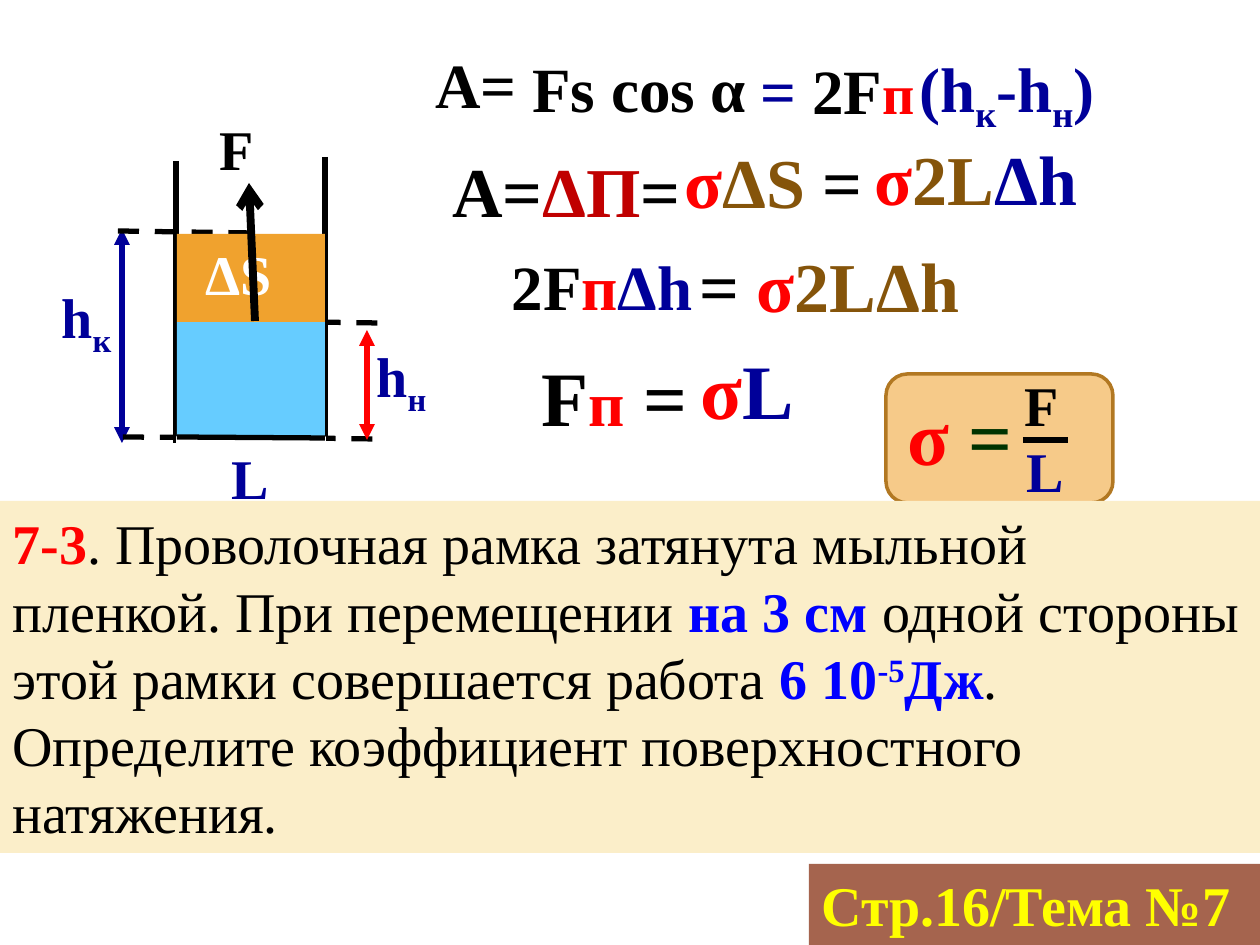
from lxml.etree import SubElement
from pptx import Presentation
from pptx.dml.color import RGBColor
from pptx.enum.dml import MSO_LINE_DASH_STYLE as Dash
from pptx.enum.shapes import MSO_CONNECTOR_TYPE as Connector, MSO_SHAPE as Shape
from pptx.enum.text import MSO_ANCHOR as Anchor, MSO_AUTO_SIZE as AutoSize, PP_ALIGN as Align
from pptx.oxml.ns import qn
from pptx.util import Emu, Pt

FONT = "Times New Roman"
BLACK = RGBColor(0, 0, 0)
WHITE = RGBColor(255, 255, 255)
RED = RGBColor(255, 0, 0)
CRIMSON = RGBColor(0xC0, 0, 0)
NAVY = RGBColor(0, 0, 0x99)
BLUE = RGBColor(0, 0, 255)
BROWN = RGBColor(0x85, 0x54, 0x0A)
GREEN = RGBColor(0, 0x33, 0)
YELLOW = RGBColor(255, 255, 0)
ORANGE = RGBColor(0xF0, 0xA2, 0x2E)
OCHRE = RGBColor(0xB2, 0x78, 0x22)
WATER = RGBColor(0x66, 0xCC, 0xFF)
CREAM = RGBColor(0xFB, 0xEE, 0xC9)
RUST = RGBColor(0xA5, 0x64, 0x4E)


def px(count):
    return Emu(round(count * 914400 / 126))


def write(box, runs, size, indent=0, wrap=False, anchor=Anchor.TOP):
    """Fill a box with one paragraph of (text, colour, font settings) runs."""
    frame = box.text_frame
    frame.word_wrap = wrap
    frame.auto_size = AutoSize.NONE if wrap else AutoSize.SHAPE_TO_FIT_TEXT
    frame.vertical_anchor = anchor
    frame.margin_left = px(12.6 + indent)
    para = frame.paragraphs[0]
    para.alignment = Align.LEFT
    para.font.name, para.font.size, para.font.bold = FONT, Pt(size), True
    for text, colour, *settings in runs:
        span = para.add_run()
        span.text = text
        span.font.color.rgb = colour
        for name, value in (settings[0] if settings else {}).items():
            if name == "baseline":
                span.font._element.set("baseline", str(value * 1000))
            else:
                setattr(span.font, name, value)


def add_label(page, at, runs, size, **layout):
    write(page.shapes.add_textbox(*map(px, at)), runs, size, **layout)


def add_block(page, at, fill, kind=Shape.RECTANGLE, line=None, width=0.75):
    block = page.shapes.add_shape(kind, *map(px, at))
    block.shadow.inherit = False
    block.fill.solid()
    block.fill.fore_color.rgb = fill
    if line is None:
        block.line.fill.background()
    else:
        block.line.color.rgb, block.line.width = line, Pt(width)
    return block


def add_line(page, ends, colour=BLACK, width=3, dashed=False, head=None, tail=None):
    line = page.shapes.add_connector(Connector.STRAIGHT, *map(px, ends))
    line.line.color.rgb, line.line.width = colour, Pt(width)
    if dashed:
        line.line.dash_style = Dash.DASH
    outline = line.line._get_or_add_ln()
    for tag, arrow in (("a:headEnd", head), ("a:tailEnd", tail)):
        if arrow:
            SubElement(outline, qn(tag), type=arrow)
    SubElement(line._element.spPr, qn("a:effectLst"))


def draw_vessel(page):
    both = {"head": "triangle", "tail": "triangle"}
    add_line(page, (122, 229, 122, 443), NAVY, **both)
    add_line(page, (176, 161, 176, 443))
    add_line(page, (325, 157, 325, 440))
    for ends in ((123, 437, 257, 438), (246, 321, 379, 323),
                 (118, 231, 251, 233), (241, 437, 374, 439)):
        add_line(page, ends, dashed=True)
    add_line(page, (367, 440, 367, 330), RED, **both)
    add_line(page, (184, 321, 316, 324), width=4.5)
    add_block(page, (177, 322, 148, 207), WATER)
    sub = {"baseline": -25}
    add_label(page, (364, 335, 78, 81), [("h", NAVY), ("н", NAVY, sub)], 32)
    add_label(page, (49, 276, 78, 81), [("h", NAVY), ("к", NAVY, sub)], 32)
    add_block(page, (177, 234, 148, 88), ORANGE)
    add_label(page, (179, 233, 147, 82), [("ΔS", WHITE)], 32, indent=14, wrap=True)
    base = add_block(page, (177, 437, 148, 105), WHITE, line=WHITE)
    write(base, [("L", NAVY)], 32, indent=42, wrap=True)
    add_line(page, (177, 437, 325, 438))
    add_line(page, (255, 321, 249, 183), width=4.5, tail="arrow")
    add_label(page, (207, 108, 60, 81), [("F", BLACK)], 32)


def write_formulas(page):
    sub = {"baseline": -25}
    add_label(page, (423, 39, 107, 89), [("A=", BLACK)], 36)
    add_label(page, (520, 43, 246, 89), [("Fs cos α", BLACK)], 36)
    add_label(page, (748, 45, 185, 89),
              [("= ", NAVY), ("2F", BLACK), ("п", RED, {"size": Pt(32)})], 36)
    add_label(page, (907, 43, 224, 89),
              [("(h", NAVY), ("к", NAVY, sub), ("-h", NAVY), ("н", NAVY, sub), (")", NAVY)], 36)
    add_label(page, (440, 141, 270, 97),
              [("A=", BLACK), ("ΔП", CRIMSON), ("=", BLACK)], 40)
    add_label(page, (654, 132, 262, 97),
              [("σ", RED), ("ΔS ", BROWN), ("=", BLACK)], 40, indent=18)
    add_label(page, (827, 129, 286, 97),
              [("σ", RED), ("2L", BROWN), ("Δh", NAVY)], 40, indent=35)
    add_label(page, (483, 241, 223, 89),
              [("2F", BLACK), ("п", RED), ("Δh", NAVY)], 36, indent=16)
    add_label(page, (669, 236, 326, 97),
              [("= ", BLACK), ("σ", RED), ("2LΔh", BROWN)], 40, indent=18)
    add_label(page, (529, 343, 174, 106),
              [("F", BLACK), ("п", RED, {"size": Pt(36)}), (" =", BLACK)], 44)
    add_label(page, (669, 336, 207, 106), [("σ", RED), ("L", NAVY)], 44,
              indent=19, wrap=True, anchor=Anchor.MIDDLE)


def draw_result(page):
    frame = add_block(page, (886, 374, 227, 129), ORANGE, Shape.ROUNDED_RECTANGLE, OCHRE, 2)
    colour = frame.fill._xPr.find(qn("a:solidFill"))[0]
    SubElement(colour, qn("a:alpha"), val="56000")
    add_label(page, (876, 382, 168, 106), [("σ", RED), (" =", GREEN)], 44,
              indent=19, wrap=True, anchor=Anchor.MIDDLE)
    add_label(page, (1012, 364, 103, 62), [("F", BLACK)], 32, wrap=True)
    add_label(page, (1014, 430, 88, 62), [("L", NAVY)], 32, wrap=True)
    add_line(page, (1023, 440, 1068, 440))


def write_problem(page):
    plain = {"bold": False}
    panel = add_block(page, (0, 501, 1260, 352), CREAM)
    write(panel, [
        ("7-3", RED),
        (". Проволочная рамка затянута мыльной пленкой. При перемещении ", BLACK, plain),
        ("на 3 см", BLUE),
        (" одной стороны этой рамки совершается работа ", BLACK, plain),
        ("6 10", BLUE), ("-5", BLUE, {"baseline": 30}), ("Дж", BLUE),
        (". Определите коэффициент поверхностного натяжения.", BLACK, plain),
    ], 32, wrap=True, anchor=Anchor.MIDDLE)
    source = add_block(page, (809, 864, 451, 81), RUST)
    write(source, [("Стр.16/Тема №7", YELLOW)], 32, wrap=True)


def main():
    """Build the slide on surface tension and save it."""
    deck = Presentation()
    deck.slide_width, deck.slide_height = px(1260), px(945)
    page = deck.slides.add_slide(deck.slide_layouts[6])
    draw_vessel(page)
    write_formulas(page)
    draw_result(page)
    write_problem(page)
    deck.save("out.pptx")


if __name__ == "__main__":
    main()
